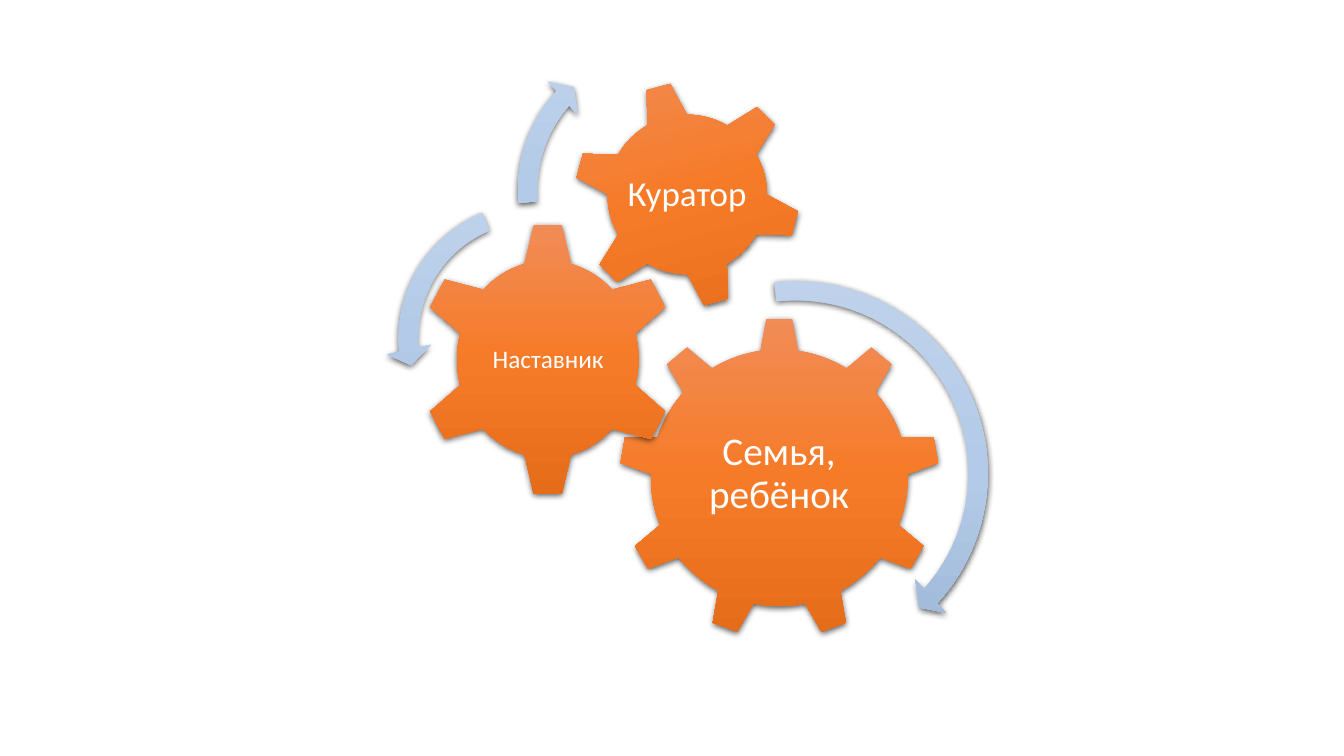
from pptx import Presentation
from pptx.dml.color import RGBColor
from pptx.enum.shapes import MSO_SHAPE
from pptx.enum.text import MSO_ANCHOR, PP_ALIGN
from pptx.oxml import parse_xml
from pptx.oxml.ns import nsdecls
from pptx.util import Cm, Pt

GEAR_6, GEAR_9 = MSO_SHAPE.GEAR_6, MSO_SHAPE.GEAR_9
ARROW, LEFT_ARROW = MSO_SHAPE.CIRCULAR_ARROW, MSO_SHAPE.LEFT_CIRCULAR_ARROW
CENTER, MIDDLE = PP_ALIGN.CENTER, MSO_ANCHOR.MIDDLE

# Content: boxes are left, top, width, height in cm
GEARS = [
    dict(text="Семья, ребёнок", kind=GEAR_9, box=(15.6, 8, 8.08, 8.08), turn=0,
         label=(17.22, 9.88, 4.83, 4.14), size=28, inset=0.1),
    dict(text="Наставник", kind=GEAR_6, box=(10.54, 5.59, 6.53, 6.93), turn=0,
         label=(12.19, 7.32, 3.25, 3.51), size=18, inset=0.08),
    dict(text="Куратор", kind=GEAR_6, box=(14.45, 2.03, 5.74, 5.74), turn=345,
         label=(15.7, 3.3, 3.23, 3.23), size=25, inset=0.08),
]
# Thickness and head in percent; head angle, end and start in degrees
ARROWS = [
    dict(kind=ARROW, box=(14.88, 6.76, 10.34, 10.34), thick=4.7,
         angles=(4.98, 42.29, 263.61), head=5.5),
    dict(kind=LEFT_ARROW, box=(9.73, 4.78, 7.49, 7.49), thick=6.5,
         angles=(7.17, 174.82, 247.3), head=7.5),
    dict(kind=ARROW, box=(12.73, 0.76, 8.08, 8.08), thick=6,
         angles=(6.57, 221.9, 175.14), head=7),
]
ORANGE = ("F18C57", "F67B28", "E56C19")
BLUE = ("C0D2EB", "B3CBE9", "9BB4D3")
WHITE = "FFFFFF"
FONT = "Calibri"


def color(hex_text):
    return RGBColor.from_string(hex_text)


def set_all(obj, **values):
    for name, value in values.items():
        setattr(obj, name, value)


def add_part(shapes, kind, box, colors):
    """Add a preset shape with an even vertical gradient and a soft shadow."""
    sp = shapes.add_shape(kind, *map(Cm, box))
    stops = "".join(
        f'<a:gs pos="{i * 50000}"><a:srgbClr val="{color(c)}"/></a:gs>'
        for i, c in enumerate(colors))
    sp._element.spPr.append(parse_xml(
        f'<a:gradFill {nsdecls("a")} rotWithShape="1"><a:gsLst>{stops}</a:gsLst>'
        '<a:lin ang="5400000" scaled="0"/></a:gradFill>'))
    sp.line.fill.background()
    sp._element.spPr.append(parse_xml(
        f'<a:effectLst {nsdecls("a")}><a:outerShdw blurRad="{Pt(4.5)}" '
        f'dist="{Pt(1.5)}" dir="5400000" algn="ctr" rotWithShape="0">'
        '<a:srgbClr val="000000"><a:alpha val="63000"/></a:srgbClr>'
        '</a:outerShdw></a:effectLst>'))
    return sp


def add_label(shapes, text, box, size, inset):
    tf = shapes.add_textbox(*map(Cm, box)).text_frame
    edges = dict.fromkeys(
        ("margin_left", "margin_top", "margin_right", "margin_bottom"), Cm(inset))
    set_all(tf, word_wrap=True, vertical_anchor=MIDDLE, **edges)
    p = tf.paragraphs[0]
    set_all(p, alignment=CENTER, line_spacing=0.9)
    p._p.get_or_add_pPr().append(parse_xml(
        f'<a:spcAft {nsdecls("a")}><a:spcPct val="35000"/></a:spcAft>'))
    r = p.add_run()
    r.text = text
    set_all(r.font, name=FONT, size=Pt(size))
    r.font.color.rgb = color(WHITE)


prs = Presentation()
set_all(prs, slide_width=Cm(33.87), slide_height=Cm(19.05))
slide = prs.slides.add_slide(prs.slide_layouts[6])
shapes = slide.shapes.add_group_shape().shapes

# Gears with their labels
for gear in GEARS:
    sp = add_part(shapes, gear["kind"], gear["box"], ORANGE)
    sp.rotation = gear["turn"]
    add_label(shapes, gear["text"], gear["label"], gear["size"], gear["inset"])

# Arrows showing the turning direction
for arrow in ARROWS:
    sp = add_part(shapes, arrow["kind"], arrow["box"], BLUE)
    angles = [degrees * 0.6 for degrees in arrow["angles"]]
    values = [arrow["thick"] / 100, *angles, arrow["head"] / 100]
    for i, value in enumerate(values):
        sp.adjustments[i] = value

prs.save("out.pptx")
